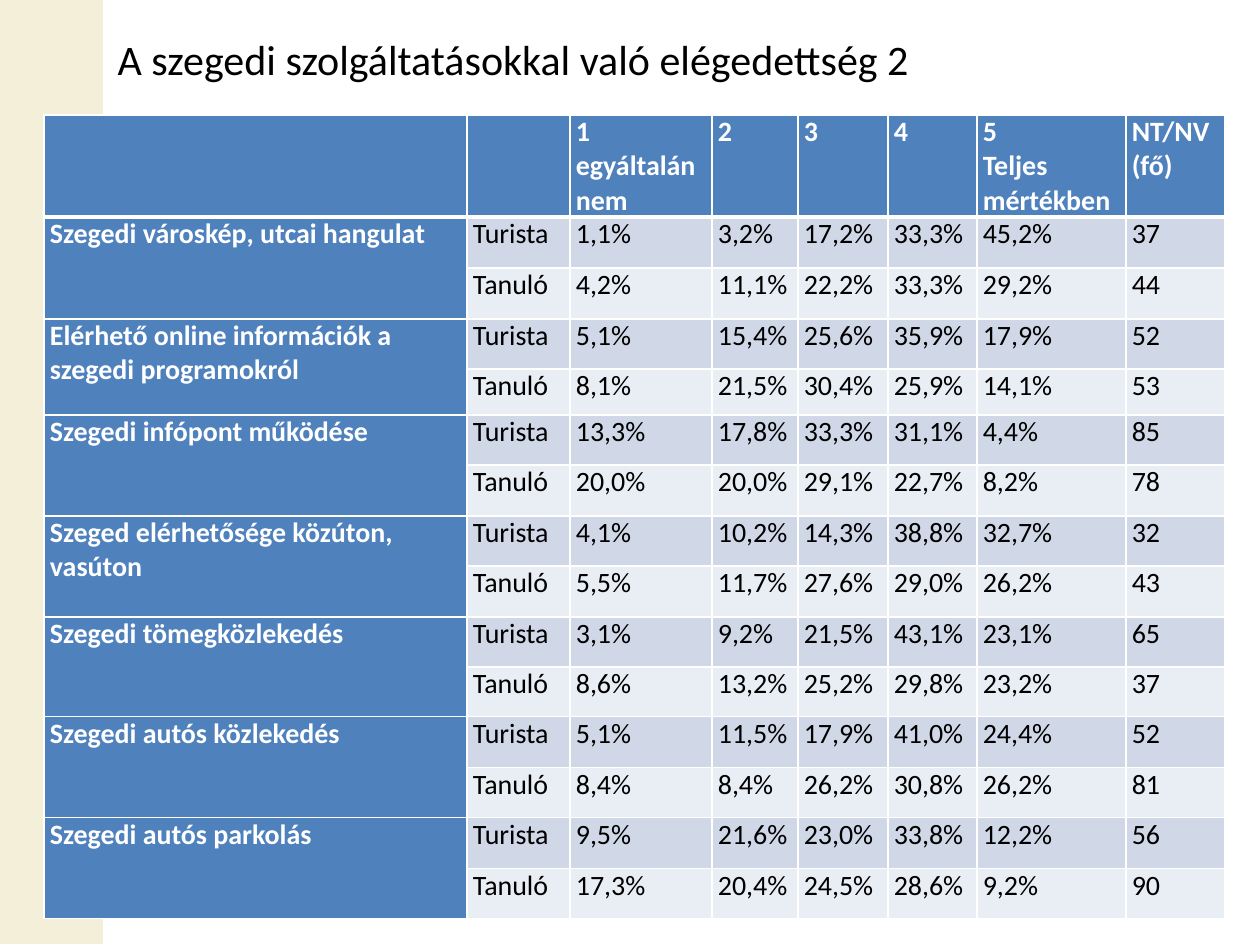
from dataclasses import dataclass

from lxml.etree import SubElement
from pptx import Presentation
from pptx.dml.color import RGBColor
from pptx.enum.text import MSO_ANCHOR as Anchor, MSO_AUTO_SIZE as AutoSize, PP_ALIGN as Align
from pptx.oxml.ns import qn
from pptx.util import Pt

EMU_PER_PX = 914400 / 126
COLORS = {
    "strip": "F4EFD8",
    "accent": "4F81BD",
    "tourist": "D0D8E8",
    "student": "E9EDF4",
    "white": "FFFFFF",
    "black": "000000",
}
COLUMNS = [423, 103, 142, 86, 90, 89, 149, 99]
ROWS = [102, 51, 51, 50, 46, 50, 51, 50, 51, 50, 50, 51, 50, 51, 50]
HEADER = ["", "", "1 egyáltalán nem", "2", "3", "4", "5\nTeljes mértékben", "NT/NV\n(fő)"]
GROUPS = ["Turista", "Tanuló"]
SERVICES = [
    ("Szegedi városkép, utcai hangulat",
     "1,1% 3,2% 17,2% 33,3% 45,2% 37", "4,2% 11,1% 22,2% 33,3% 29,2% 44"),
    ("Elérhető online információk a szegedi programokról",
     "5,1% 15,4% 25,6% 35,9% 17,9% 52", "8,1% 21,5% 30,4% 25,9% 14,1% 53"),
    ("Szegedi infópont működése",
     "13,3% 17,8% 33,3% 31,1% 4,4% 85", "20,0% 20,0% 29,1% 22,7% 8,2% 78"),
    ("Szeged elérhetősége közúton, vasúton",
     "4,1% 10,2% 14,3% 38,8% 32,7% 32", "5,5% 11,7% 27,6% 29,0% 26,2% 43"),
    ("Szegedi tömegközlekedés",
     "3,1% 9,2% 21,5% 43,1% 23,1% 65", "8,6% 13,2% 25,2% 29,8% 23,2% 37"),
    ("Szegedi autós közlekedés",
     "5,1% 11,5% 17,9% 41,0% 24,4% 52", "8,4% 8,4% 26,2% 30,8% 26,2% 81"),
    ("Szegedi autós parkolás",
     "9,5% 21,6% 23,0% 33,8% 12,2% 56", "17,3% 20,4% 24,5% 28,6% 9,2% 90"),
]


def px(count):
    return round(count * EMU_PER_PX)


def rgb(name):
    return RGBColor.from_string(COLORS[name])


@dataclass
class SlideBuilder:
    page: object
    font: str = "Calibri"
    title_size: int = 24
    cell_size: int = 16
    cell_inset: int = 6

    def format_text(self, frame, size, color, bold=False):
        for para in frame.paragraphs:
            para.alignment = Align.LEFT
            para.font.name = self.font
            para.font.size = Pt(size)
            para.font.bold = bold
            para.font.color.rgb = rgb(color)

    def title(self, text, left, top, width, height):
        box = self.page.shapes.title
        box.left, box.top, box.width, box.height = map(px, (left, top, width, height))
        frame = box.text_frame
        frame.text = text
        frame.word_wrap = False
        frame.auto_size = AutoSize.SHAPE_TO_FIT_TEXT
        frame.vertical_anchor = Anchor.MIDDLE
        self.format_text(frame, self.title_size, "black")

    def table(self, left, top, columns, rows):
        grid = self.page.shapes.add_table(
            len(rows), len(columns), px(left), px(top), px(sum(columns)), px(sum(rows))
        ).table
        for column, width in zip(grid.columns, columns):
            column.width = px(width)
        for row, height in zip(grid.rows, rows):
            row.height = px(height)
        return grid

    def borders(self, cell, bottom):
        properties = cell._tc.get_or_add_tcPr()
        for side, points in (("L", 1), ("R", 1), ("T", 1), ("B", bottom)):
            line = SubElement(properties, qn(f"a:ln{side}"), w=str(Pt(points)))
            fill = SubElement(line, qn("a:solidFill"))
            SubElement(fill, qn("a:srgbClr"), val=COLORS["white"])

    def fill(self, cell, color):
        cell.fill.solid()
        cell.fill.fore_color.rgb = rgb(color)

    def cell(self, cell, text, fill, strong=False, bottom=1):
        self.borders(cell, bottom)
        self.fill(cell, fill)
        cell.margin_left = cell.margin_right = px(self.cell_inset)
        cell.margin_top = cell.margin_bottom = 0
        cell.vertical_anchor = Anchor.TOP
        cell.text_frame.text = text
        self.format_text(cell.text_frame, self.cell_size, "white" if strong else "black", strong)


def main():
    deck = Presentation()
    deck.slide_width, deck.slide_height = px(1260), px(945)
    builder = SlideBuilder(deck.slides.add_slide(deck.slide_layouts[5]))

    strip = builder.table(-5, -4, [109], [949])
    builder.fill(strip.cell(0, 0), "strip")

    ratings = builder.table(44, 115, COLUMNS, ROWS)
    for column, text in enumerate(HEADER):
        builder.cell(ratings.cell(0, column), text, "accent", strong=True, bottom=3)
    for index, (service, *results) in enumerate(SERVICES):
        first = 1 + 2 * index
        for offset, (group, values) in enumerate(zip(GROUPS, results)):
            row = first + offset
            label = "" if offset else service
            builder.cell(ratings.cell(row, 0), label, "accent", strong=True)
            shade = ("tourist", "student")[offset]
            for column, text in enumerate([group, *values.split()], start=1):
                builder.cell(ratings.cell(row, column), text, shade)
        ratings.cell(first, 0).merge(ratings.cell(first + 1, 0))

    builder.title("A szegedi szolgáltatásokkal való elégedettség 2", 105, 27, 824, 63)
    deck.save("out.pptx")


if __name__ == "__main__":
    main()
